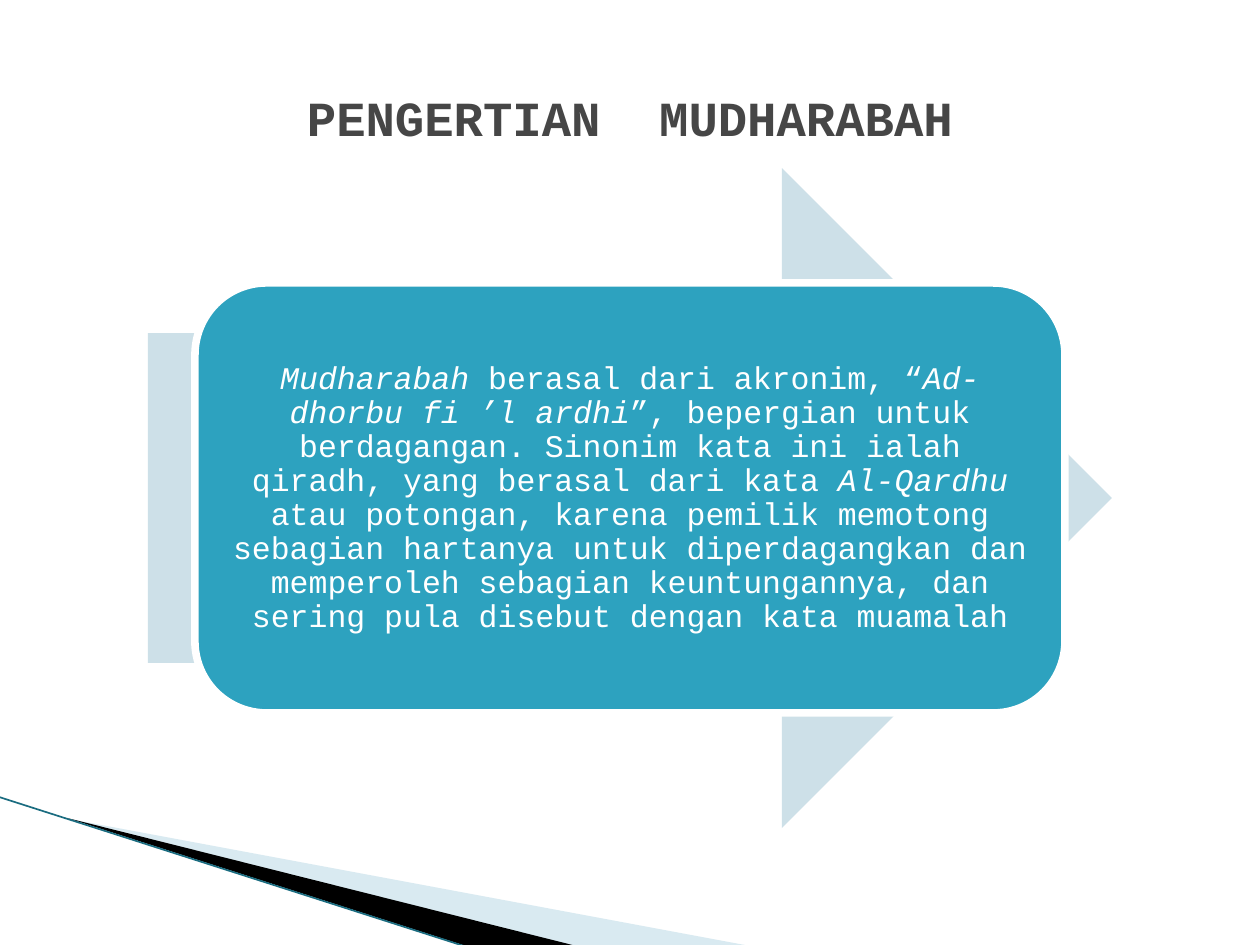
from lxml import etree
from pptx import Presentation, util as u
from pptx.dml.color import RGBColor
from pptx.enum import shapes, text
from pptx.oxml.ns import qn

PX = 914400 / 126
FONT = "Courier New"
COLORS = {
    "title": "464646", "white": "FFFFFF", "arrow": "CDE0E8", "card": "2DA2BF",
    "pale": "A0CBDC", "black": "000000", "edge": "1A6C80",
}
TITLE = "PENGERTIAN  MUDHARABAH"
# (words, italic)
DEFINITION = [
    ("Mudharabah ", True),
    ("berasal dari akronim, “", False),
    ("Ad-dhorbu fi ’l ardhi", True),
    ("”, bepergian untuk berdagangan. Sinonim kata ini ialah qiradh, "
     "yang berasal dari kata ", False),
    ("Al-Qardhu ", True),
    ("atau potongan, karena pemilik memotong sebagian hartanya untuk "
     "diperdagangkan dan memperoleh sebagian keuntungannya, dan sering pula "
     "disebut dengan kata muamalah", False),
]
# (corner points, colour, opacity in percent)
WEDGES = [
    ([(69, 819), (750, 946), (575, 946)], "pale", 40),
    ([(67, 818), (576, 946), (469, 947)], "black", 100),
]
EDGE = (-1, 797, 467, 947)
TITLE_BOX = (63, 38, 1134, 157)
ARROW_BOX = (148, 168, 964, 660)
CARD_BOX = (195, 283, 870, 430)


def emu(*lengths):
    return [u.Emu(round(n * PX)) for n in lengths]


def rgb(name):
    return RGBColor.from_string(COLORS[name])


def paint(sp, color, opacity=100):
    """Give a shape a flat fill with no line and no shadow."""
    sp.shadow.inherit = False
    sp.line.fill.background()
    sp.fill.solid()
    sp.fill.fore_color.rgb = rgb(color)
    if opacity < 100:
        clr = sp._element.spPr.find(qn("a:solidFill"))[0]
        etree.SubElement(clr, qn("a:alpha"), val=str(opacity * 1000))


def write(sp, runs, size, color, bold=False, spacing=1.0):
    """Fill a shape with one centred paragraph of (words, italic) runs."""
    tf = sp.text_frame
    tf.word_wrap = True
    tf.vertical_anchor = text.MSO_ANCHOR.MIDDLE
    p = tf.paragraphs[0]
    p.alignment = text.PP_ALIGN.CENTER
    p.line_spacing = spacing
    for words, italic in runs:
        r = p.add_run()
        r.text = words
        r.font.name = FONT
        r.font.size = u.Pt(size)
        r.font.bold = bold
        r.font.italic = italic
        r.font.color.rgb = rgb(color)
    return tf


prs = Presentation()
prs.slide_width, prs.slide_height = emu(1260, 945)
slide = prs.slides.add_slide(prs.slide_layouts[6])
tree = slide.shapes

for points, color, opacity in WEDGES:
    outline = tree.build_freeform(*points[0], scale=PX)
    outline.add_line_segments(points[1:], close=True)
    paint(outline.convert_to_shape(), color, opacity)

edge = tree.add_connector(shapes.MSO_CONNECTOR.STRAIGHT, *emu(*EDGE))
edge.line.color.rgb = rgb("edge")
edge.line.width = u.Pt(0.95)
etree.SubElement(edge._element.spPr, qn("a:effectLst"))

arrow = tree.add_shape(shapes.MSO_SHAPE.RIGHT_ARROW, *emu(*ARROW_BOX))
paint(arrow, "arrow")

card = tree.add_shape(shapes.MSO_SHAPE.ROUNDED_RECTANGLE, *emu(*CARD_BOX))
paint(card, "card")
card.line.color.rgb = rgb("white")
card.line.width = u.Pt(4.33)
tf = write(card, DEFINITION, 18, "white", spacing=0.9)
tf.margin_left = tf.margin_top = tf.margin_right = tf.margin_bottom = emu(9)[0]

title = tree.add_textbox(*emu(*TITLE_BOX))
write(title, [(TITLE, False)], 28, "title", bold=True)

prs.save("out.pptx")
